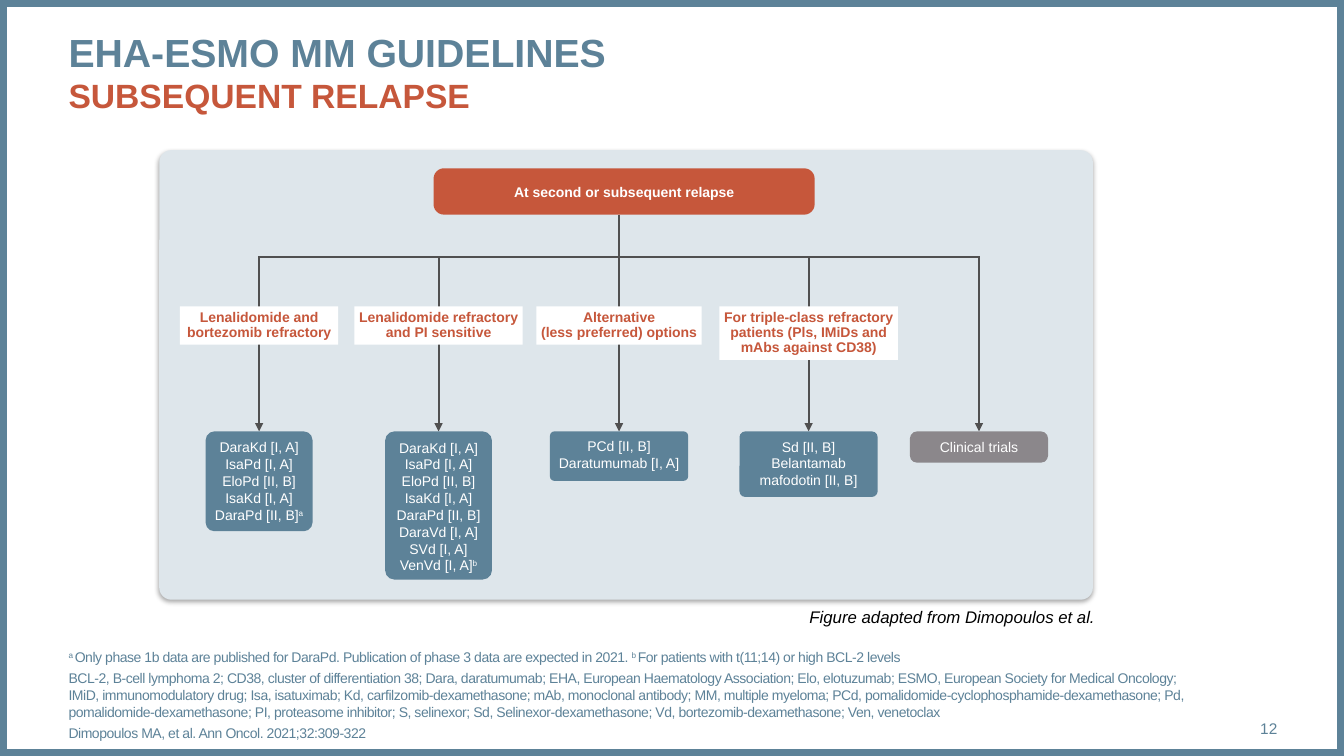
import lxml.etree
import pptx
import pptx.dml.color
import pptx.enum.shapes
import pptx.enum.text
import pptx.oxml.ns
import pptx.util

Inches = pptx.util.Inches
Pt = pptx.util.Pt
RGBColor = pptx.dml.color.RGBColor
SHAPE = pptx.enum.shapes.MSO_SHAPE
LINK = pptx.enum.shapes.MSO_CONNECTOR.STRAIGHT
ALIGN = pptx.enum.text.PP_ALIGN
ANCHOR = pptx.enum.text.MSO_ANCHOR
FIT = pptx.enum.text.MSO_AUTO_SIZE
qn = pptx.oxml.ns.qn

BLUE = RGBColor(0x5D, 0x82, 0x98)
RED = RGBColor(0xC6, 0x57, 0x3B)
PALE = RGBColor(0xDE, 0xE6, 0xEB)
GREY = RGBColor(0x8B, 0x87, 0x8B)
DARK = RGBColor(0x50, 0x50, 0x50)
WHITE = RGBColor(0xFF, 0xFF, 0xFF)
BLACK = RGBColor(0, 0, 0)

WIDE, HIGH = 13.33, 7.5
LEFT = 0.68

# Column centre, label width, label height, label, box width, box height, drugs
COLUMNS = [
    (2.57, 1.57, 0.38, ["Lenalidomide and\nbortezomib refractory"], 1.06, 0.99,
     ["DaraKd [I, A]", "IsaPd [I, A]", "EloPd [II, B]", "IsaKd [I, A]",
      "DaraPd [II, B]^a^"]),
    (4.35, 1.67, 0.38, ["Lenalidomide refractory", "and PI sensitive"], 1.06, 1.47,
     ["DaraKd [I, A]", "IsaPd [I, A]", "EloPd [II, B]", "IsaKd [I, A]",
      "DaraPd [II, B]", "DaraVd [I, A]", "SVd [I, A]", "VenVd [I, A]^b^"]),
    (6.14, 1.64, 0.38, ["Alternative\n(less preferred) options"], 1.37, 0.49,
     ["PCd [II, B]", "Daratumumab [I, A]"]),
    (8.02, 1.77, 0.53,
     ["For triple-class refractory\npatients (Pls, IMiDs and\nmAbs against CD38)"],
     1.37, 0.65, ["Sd [II, B]", "Belantamab mafodotin [II, B]"]),
    (9.71, 0, 0, [], 1.37, 0.31, ["Clinical trials"]),
]

NOTES = [
    "^a ^Only phase 1b data are published for DaraPd. Publication of phase 3 data "
    "are expected in 2021. ^b ^For patients with t(11;14) or high BCL-2 levels",
    "BCL-2, B-cell lymphoma 2; CD38, cluster of differentiation 38; Dara, "
    "daratumumab; EHA, European Haematology Association; Elo, elotuzumab; ESMO, "
    "European Society for Medical Oncology; IMiD, immunomodulatory drug; Isa, "
    "isatuximab; Kd, carfilzomib-dexamethasone; mAb, monoclonal antibody; MM, "
    "multiple myeloma; PCd, pomalidomide-cyclophosphamide-dexamethasone; "
    "Pd, pomalidomide-dexamethasone; PI, proteasome inhibitor; S, selinexor; Sd, "
    "Selinexor-dexamethasone; Vd, bortezomib-dexamethasone; Ven, venetoclax",
    "Dimopoulos MA, et al. Ann Oncol. 2021;32:309-322",
]


def add_run(para, text, color, size=10, **style):
    run = para.add_run()
    run.text = text
    run.font.color.rgb = color
    for name, value in {"name": "Arial", "size": Pt(size), **style}.items():
        setattr(run.font, name, value)
    return run


def set_frame(frame, margins=(0, 0), anchor=ANCHOR.TOP, wrap=True):
    side, end = map(Inches, margins)
    values = {"margin_left": side, "margin_right": side, "margin_top": end,
              "margin_bottom": end, "vertical_anchor": anchor,
              "auto_size": FIT.NONE, "word_wrap": wrap}
    for name, value in values.items():
        setattr(frame, name, value)


def write(frame, paras, color, align=ALIGN.LEFT, before=0, line=None, track=0, **style):
    """Fill a frame; text between carets is raised and newlines break lines."""
    for index, text in enumerate(paras):
        para = frame.add_paragraph() if index else frame.paragraphs[0]
        para.alignment = align
        para.line_spacing = line
        para.space_before = Pt(before if index else 0)
        for part, chunk in enumerate(text.split("^")):
            for row, words in enumerate(chunk.split("\n")):
                if row:
                    para.add_line_break()
                if not words:
                    continue
                props = add_run(para, words, color, **style).font._element
                if part % 2:
                    props.set("baseline", "30000")
                if track:
                    props.set("spc", str(track))


def add_box(slide, kind, box, fill, round_by=None):
    shape = slide.shapes.add_shape(kind, *map(Inches, box))
    shape.shadow.inherit = False
    shape.line.fill.background()
    if fill is None:
        shape.fill.background()
    else:
        shape.fill.solid()
        shape.fill.fore_color.rgb = fill
    if round_by is not None:
        shape.adjustments[0] = round_by
    return shape


def add_text(slide, box, paras, color, anchor=ANCHOR.TOP, wrap=True, margins=(0, 0),
             **style):
    frame = slide.shapes.add_textbox(*map(Inches, box)).text_frame
    set_frame(frame, margins, anchor, wrap)
    write(frame, paras, color, **style)


def add_line(slide, start, end, arrow=False):
    link = slide.shapes.add_connector(LINK, *map(Inches, start + end))
    link.line.color.rgb = DARK
    link.line.width = Pt(1.5)
    if arrow:
        lxml.etree.SubElement(link.line._get_or_add_ln(), qn("a:tailEnd"), type="triangle")
    lxml.etree.SubElement(link._element.spPr, qn("a:effectLst"))


def add_shade(shape):
    effects = shape._element.spPr.find(qn("a:effectLst"))
    shade = lxml.etree.SubElement(effects, qn("a:outerShdw"), blurRad=str(Pt(3.1)),
                                  dist=str(Pt(1.8)), dir="5400000", rotWithShape="0")
    tint = lxml.etree.SubElement(shade, qn("a:srgbClr"), val="000000")
    lxml.etree.SubElement(tint, qn("a:alpha"), val="35000")


def add_border(slide):
    border = add_box(slide, SHAPE.RECTANGLE, (0, 0, WIDE, HIGH), None)
    border.line.color.rgb = BLUE
    border.line.width = Pt(10)


def set_title(slide, left, top, width, height):
    title = slide.shapes.title
    values = {"left": left, "top": top, "width": width, "height": height}
    for name, value in values.items():
        setattr(title, name, Inches(value))
    set_frame(title.text_frame)
    para = title.text_frame.paragraphs[0]
    para.alignment = ALIGN.LEFT
    add_run(para, "EHA-ESMO MM GUIDELINES", BLUE, 28, bold=True)
    para.add_line_break()
    add_run(para, "SUBSEQUENT RELAPSE", RED, 24, bold=True)


def add_column(slide, top, column):
    """Draw one branch down from the crossbar at the given height."""
    mid, label_w, label_h, label, width, height, drugs = column
    base = top + 1.73
    add_line(slide, (mid, top), (mid, base), arrow=True)
    if label:
        place = (mid - label_w / 2, top + 0.49, label_w, label_h)
        frame = add_box(slide, SHAPE.RECTANGLE, place, WHITE).text_frame
        set_frame(frame, (0.04, 0.04), wrap=False)
        write(frame, label, RED, ALIGN.CENTER, line=0.9, bold=True)
    fill, bend = (BLUE, 0.087) if label else (GREY, 0.224)
    place = (mid - width / 2, base, width, height)
    frame = add_box(slide, SHAPE.ROUNDED_RECTANGLE, place, fill, bend).text_frame
    set_frame(frame, (0.04, 0.05))
    write(frame, drugs, WHITE, ALIGN.CENTER)


def add_chart_panel(slide, left, top, width, height):
    add_shade(add_box(slide, SHAPE.ROUNDED_RECTANGLE, (left, top, width, height),
                      PALE, 0.027))
    root = (left + 2.72, top + 0.18, 3.78, 0.46)
    frame = add_box(slide, SHAPE.ROUNDED_RECTANGLE, root, RED, 0.226).text_frame
    set_frame(frame, (0.04, 0.05), ANCHOR.MIDDLE)
    write(frame, ["At second or subsequent relapse"], WHITE, ALIGN.CENTER, bold=True)
    bar = top + 1.06
    stem = COLUMNS[2][0]
    add_line(slide, (stem, root[1] + root[3]), (stem, bar))
    for column in COLUMNS:
        add_column(slide, bar, column)
    add_line(slide, (COLUMNS[0][0] - 0.01, bar), (COLUMNS[-1][0] + 0.01, bar))
    credit = (left + width - 2.91, top + height + 0.02, 3.06, 0.3)
    add_text(slide, credit, ["Figure adapted from Dimopoulos et al."], BLACK,
             wrap=False, margins=(0.1, 0.05), size=12, italic=True)


def add_footer(slide, left, top, width, height):
    add_text(slide, (left, top, width - 0.86, height), NOTES, BLUE, ANCHOR.BOTTOM,
             before=3, track=-30)
    add_text(slide, (left + width - 0.86, top + height - 0.32, 0.86, 0.4), ["12"],
             BLUE, ANCHOR.MIDDLE, align=ALIGN.RIGHT, size=11)


def main():
    deck = pptx.Presentation()
    deck.slide_width = Inches(WIDE)
    deck.slide_height = Inches(HIGH)
    slide = deck.slides.add_slide(deck.slide_layouts[5])
    add_border(slide)
    set_title(slide, LEFT, 0.28, 11.99, 0.94)
    add_chart_panel(slide, 1.58, 1.49, 9.26, 4.46)
    add_footer(slide, LEFT, 6.4, 11.99, 0.95)
    deck.save("out.pptx")


if __name__ == "__main__":
    main()
